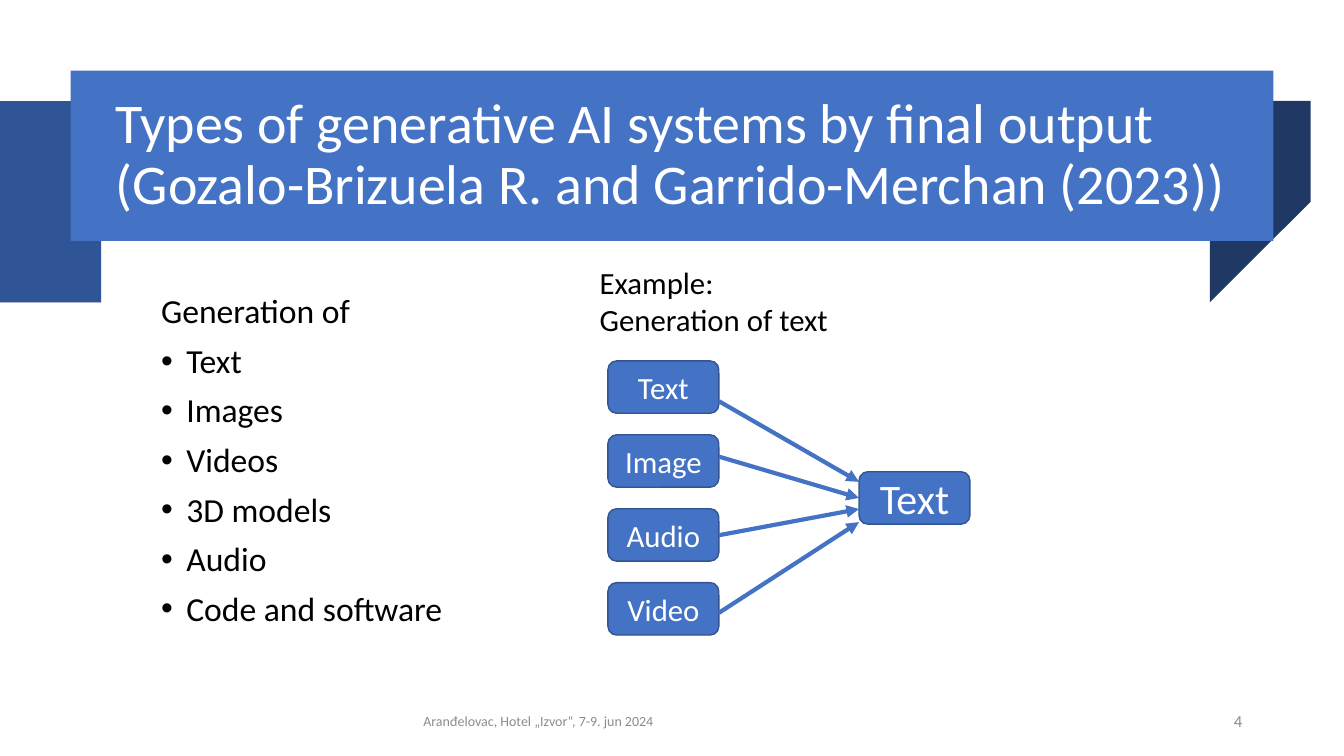
from lxml.etree import SubElement
from pptx import Presentation
from pptx.dml.color import RGBColor
from pptx.enum.shapes import MSO_CONNECTOR as Connector, MSO_SHAPE as Shape
from pptx.enum.text import MSO_ANCHOR as Anchor, PP_ALIGN as Align
from pptx.oxml.ns import qn
from pptx.util import Inches, Pt

BLUE = RGBColor(0x44, 0x72, 0xC4)
OUTLINE = RGBColor(0x32, 0x54, 0x91)
FOLD = RGBColor(0x2F, 0x55, 0x97)
NAVY = RGBColor(0x20, 0x38, 0x64)
WHITE = RGBColor(0xFF, 0xFF, 0xFF)
BLACK = RGBColor(0, 0, 0)
GREY = RGBColor(0x8C, 0x8C, 0x8C)

RIBBON_FOLDS = [
    (NAVY, [(0.52, 2.71), (-0.25, 2.08), (-0.25, 0.42), (0.52, 1.05)]),
    (FOLD, [(0.19, 1.88), (-0.25, 2.08), (-0.25, 0.42), (0.19, 0.22)]),
    (NAVY, [(0.19, 1.87), (0.01, 1.69), (0.01, 0), (0.19, 0.19)]),
    (NAVY, [(11.93, 1.68), (11.57, 1.9), (11.57, 0.21), (11.93, 0)]),
]
OUTPUT_TYPES = ["Text", "Images", "Videos", "3D models", "Audio", "Code and software"]
INPUT_ARROWS = [("Text", 0.4, 1.2), ("Image", 0.95, 1.36),
                ("Audio", 1.73, 1.47), ("Video", 2.5, 1.6)]


def style_text(frame, size, color, align=Align.LEFT):
    """Format every run of a text frame."""
    frame.word_wrap = True
    for paragraph in frame.paragraphs:
        paragraph.alignment = align
        for run in paragraph.runs:
            run.font.name = "Calibri"
            run.font.size = Pt(size)
            run.font.color.rgb = color


def add_text(slide, box, text, size, color, align=Align.LEFT, anchor=Anchor.MIDDLE):
    """Add a text box in the given box and return its frame."""
    frame = slide.shapes.add_textbox(*map(Inches, box)).text_frame
    frame.text = text
    frame.vertical_anchor = anchor
    style_text(frame, size, color, align)
    return frame


def paint(shape, fill, outline=None):
    """Give a shape a flat fill and an optional thin outline."""
    shape.shadow.inherit = False
    shape.fill.solid()
    shape.fill.fore_color.rgb = fill
    if outline is None:
        shape.line.fill.background()
    else:
        shape.line.color.rgb = outline
        shape.line.width = Pt(1)


def add_title_ribbon(slide, left, top, width, height):
    """Draw the folded ribbon with the slide title."""
    for color, corners in RIBBON_FOLDS:
        points = [(left + x, top + y) for x, y in corners]
        outline = slide.shapes.build_freeform(*points[0], scale=Inches(1))
        outline.add_line_segments(points[1:], close=True)
        paint(outline.convert_to_shape(), color)
    banner = slide.shapes.add_shape(
        Shape.RECTANGLE, *map(Inches, (left, top, width, height)))
    paint(banner, BLUE)
    title = add_text(
        slide, (left + 0.35, top + 0.18, width - 0.7, height - 0.36),
        "Types of generative AI systems by final output "
        "(Gozalo-Brizuela R. and Garrido-Merchan (2023))", 40, WHITE)
    title.paragraphs[0].line_spacing = 0.9


def add_output_list(slide, box):
    """Write the bulleted list of output types under its heading."""
    frame = add_text(slide, box, "\n".join(["Generation of"] + OUTPUT_TYPES), 24, BLACK)
    for paragraph in frame.paragraphs:
        paragraph.line_spacing = 0.9
    for output_type in frame.paragraphs[1:]:
        output_type.space_before = Pt(9.5)
        properties = output_type._p.get_or_add_pPr()
        properties.set("marL", str(Inches(0.25)))
        properties.set("indent", str(-Inches(0.25)))
        SubElement(properties, qn("a:buFont")).set("typeface", "Arial")
        SubElement(properties, qn("a:buChar")).set("char", "•")


def add_node(slide, left, top, width, height, label, size):
    """Add one labelled rounded box of the diagram."""
    node = slide.shapes.add_shape(
        Shape.ROUNDED_RECTANGLE, *map(Inches, (left, top, width, height)))
    paint(node, BLUE, OUTLINE)
    node.text_frame.text = label
    node.text_frame.vertical_anchor = Anchor.MIDDLE
    style_text(node.text_frame, size, WHITE, Align.CENTER)


def add_arrow(slide, start, end):
    """Connect two points with an arrow."""
    arrow = slide.shapes.add_connector(
        Connector.STRAIGHT, *map(Inches, (*start, *end)))
    arrow.line.color.rgb = BLUE
    arrow.line.width = Pt(3)
    SubElement(arrow.line._get_or_add_ln(), qn("a:tailEnd")).set("type", "triangle")
    SubElement(arrow._element.spPr, qn("a:effectLst"))


def add_text_example(slide, left, top, width, height):
    """Draw the diagram of four inputs leading to one text output."""
    node_width, node_height = 1.1, 0.52
    pitch = (height - node_height) / (len(INPUT_ARROWS) - 1)
    output_left = left + width - node_width
    add_text(slide, (left - 0.18, top - 1.01, 2.7, 0.84),
             "Example: Generation of text", 22, BLACK, anchor=Anchor.TOP)
    for row, (label, start, end) in enumerate(INPUT_ARROWS):
        add_node(slide, left, top + row * pitch, node_width, node_height, label, 22)
        add_arrow(slide, (left + node_width, top + start), (output_left, top + end))
    add_node(slide, output_left, top + 1.1, node_width, node_height, "Text", 30)


def add_footer(slide, left, top, width, height):
    """Write the event line and the slide number."""
    event = add_text(slide, (left, top, width, height),
                     "Aranđelovac, Hotel „Izvor“, 7-9. jun 2024", 10, GREY)
    event.paragraphs[0].space_after = Pt(6)
    add_text(slide, (left + 5.32, top - 0.03, 3, 0.4), "4", 12, GREY, Align.RIGHT)


def main():
    """Build and save the slide."""
    deck = Presentation()
    deck.slide_width, deck.slide_height = Inches(13.33), Inches(7.5)
    slide = deck.slides.add_slide(deck.slide_layouts[6])
    add_title_ribbon(slide, 0.7, 0.7, 11.93, 1.69)
    add_output_list(slide, (1.5, 2.73, 4.3, 3.7))
    add_text_example(slide, 6.03, 3.58, 3.59, 2.72)
    add_footer(slide, 4.1, 6.98, 7.39, 0.35)
    deck.save("out.pptx")


if __name__ == "__main__":
    main()
